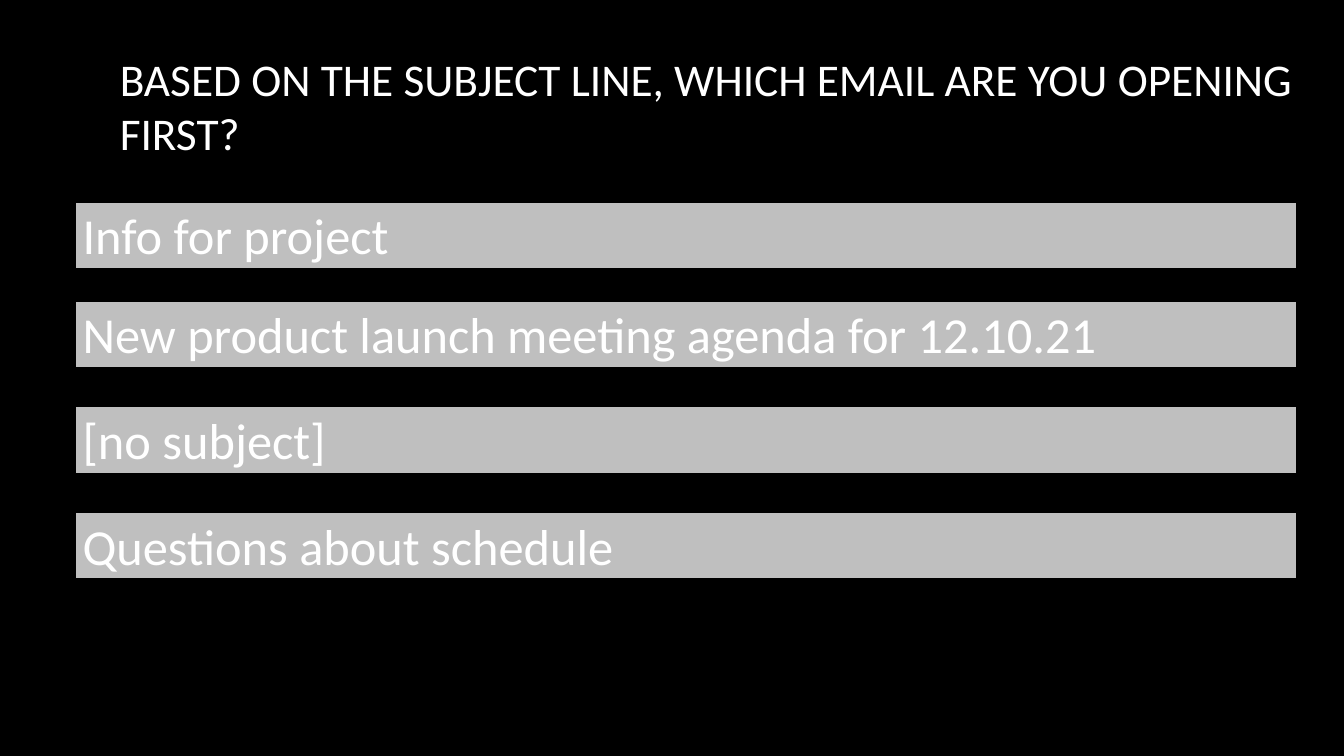
from pptx import Presentation
from pptx.dml.color import RGBColor
from pptx.enum.shapes import MSO_SHAPE
from pptx.enum.text import MSO_ANCHOR, MSO_AUTO_SIZE, PP_ALIGN
from pptx.util import Pt

COLORS = {"black": "000000", "white": "FFFFFF", "gray": "BFBFBF"}


class Deck:
    """Hold the slide and the style of its title and subject bars."""

    font = "Calibri"

    def __init__(self):
        self.show = Presentation()
        self.show.slide_width, self.show.slide_height = Pt(960), Pt(540)
        self.slide = self.show.slides.add_slide(self.show.slide_layouts[6])
        self.paint(self.slide.background.fill, "black")

    def paint(self, fill, color):
        fill.solid()
        fill.fore_color.rgb = RGBColor.from_string(COLORS[color])

    def label(self, shape, text, size, anchor):
        frame = shape.text_frame
        frame.text = text
        frame.word_wrap = True
        frame.vertical_anchor = anchor
        line = frame.paragraphs[0]
        line.alignment = PP_ALIGN.LEFT
        font = line.runs[0].font
        font.name, font.size = self.font, Pt(size)
        self.paint(font.fill, "white")

    def title(self, text, left, top, width, height):
        box = self.slide.shapes.add_textbox(Pt(left), Pt(top), Pt(width), Pt(height))
        self.label(box, text, 32.4, MSO_ANCHOR.MIDDLE)

    def bar(self, text, left, top, width, height):
        box = self.slide.shapes.add_shape(
            MSO_SHAPE.RECTANGLE, Pt(left), Pt(top), Pt(width), Pt(height))
        box.shadow.inherit = False
        self.paint(box.fill, "gray")
        self.paint(box.line.fill, "black")
        box.line.width = Pt(4.5)
        self.label(box, text, 36, MSO_ANCHOR.TOP)
        box.text_frame.auto_size = MSO_AUTO_SIZE.SHAPE_TO_FIT_TEXT


def main():
    deck = Deck()
    deck.title("BASED ON THE SUBJECT LINE, WHICH EMAIL ARE YOU OPENING FIRST?",
               78.5, 29.5, 881.3, 91.4)
    subjects = [
        ("Info for project", 142.5),
        ("New product launch meeting agenda for 12.10.21", 213.1),
        ("[no subject]", 288.7),
        ("Questions about schedule", 364.3),
    ]
    for text, top in subjects:
        deck.bar(text, 51.9, top, 876.2, 51.1)
    deck.show.save("out.pptx")


if __name__ == "__main__":
    main()
